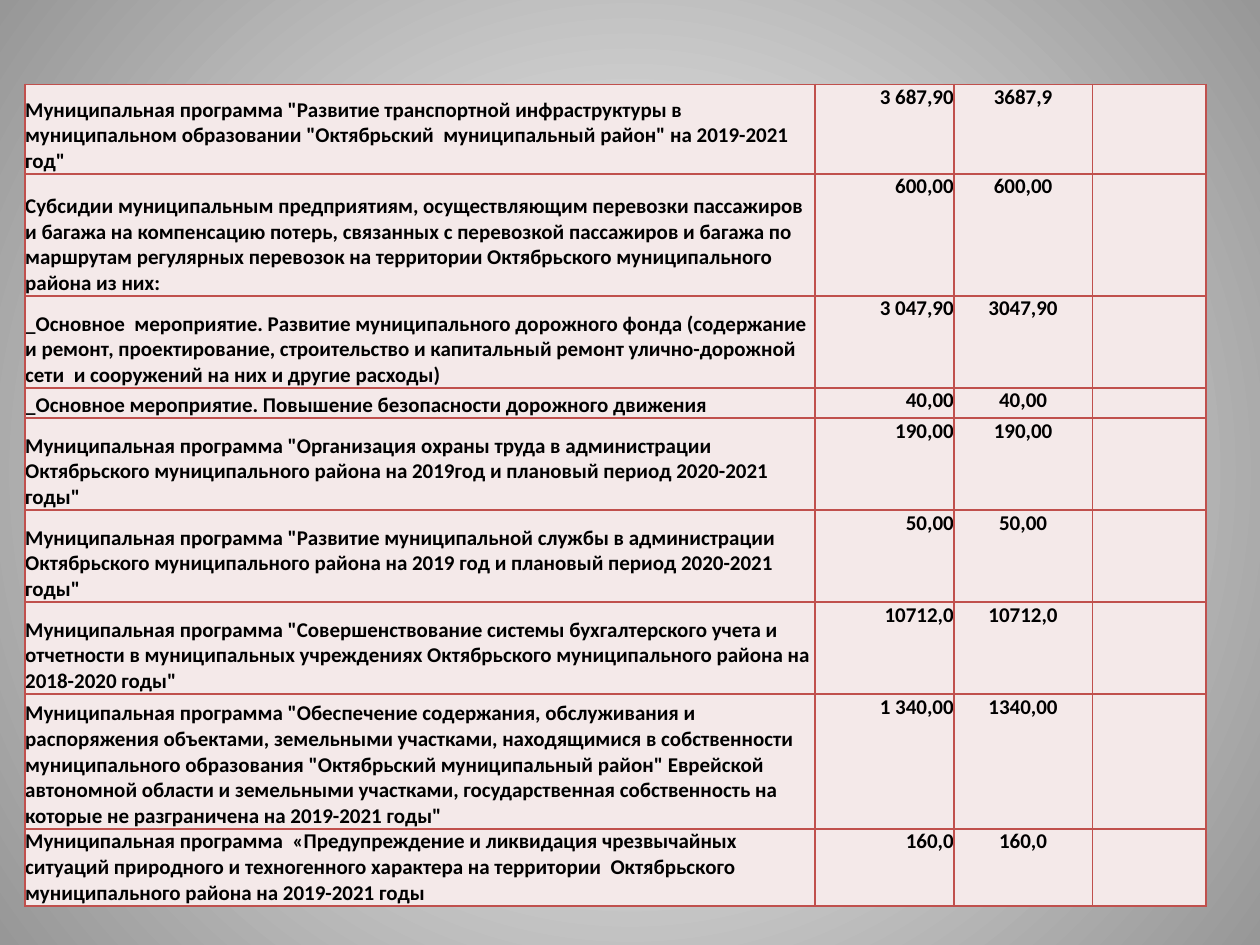
from lxml.etree import SubElement
from pptx import Presentation
from pptx.dml.color import RGBColor
from pptx.enum.text import MSO_ANCHOR, PP_ALIGN
from pptx.oxml import parse_xml
from pptx.oxml.ns import nsdecls, qn
from pptx.util import Inches, Pt

ROWS = [
    (0.71, 'Муниципальная программа "Развитие транспортной инфраструктуры в муниципальном образовании "Октябрьский  муниципальный район" на 2019-2021 год"', "3 687,90", "3687,9"),
    (0.97, "Субсидии муниципальным предприятиям, осуществляющим перевозки пассажиров и багажа на компенсацию потерь, связанных с перевозкой пассажиров и багажа по маршрутам регулярных перевозок на территории Октябрьского муниципального района из них:", "600,00", "600,00"),
    (0.73, "_Основное  мероприятие. Развитие муниципального дорожного фонда (содержание и ремонт, проектирование, строительство и капитальный ремонт улично-дорожной сети  и сооружений на них и другие расходы)", "3 047,90", "3047,90"),
    (0.24, "_Основное мероприятие. Повышение безопасности дорожного движения", "40,00", "40,00"),
    (0.73, 'Муниципальная программа "Организация охраны труда в администрации Октябрьского муниципального района на 2019год и плановый период 2020-2021 годы"', "190,00", "190,00"),
    (0.73, 'Муниципальная программа "Развитие муниципальной службы в администрации Октябрьского муниципального района на 2019 год и плановый период 2020-2021 годы"', "50,00", "50,00"),
    (0.73, 'Муниципальная программа "Совершенствование системы бухгалтерского учета и отчетности в муниципальных учреждениях Октябрьского муниципального района на 2018-2020 годы"', "10712,0", "10712,0"),
    (1.07, 'Муниципальная программа "Обеспечение содержания, обслуживания и распоряжения объектами, земельными участками, находящимися в собственности муниципального образования "Октябрьский муниципальный район" Еврейской автономной области и земельными участками, государственная собственность на которые не разграничена на 2019-2021 годы"', "1 340,00", "1340,00"),
    (0.57, "Муниципальная программа  «Предупреждение и ликвидация чрезвычайных ситуаций природного и техногенного характера на территории  Октябрьского муниципального района на 2019-2021 годы", "160,0", "160,0"),
]
COLS = [
    (6.27, PP_ALIGN.LEFT, MSO_ANCHOR.BOTTOM),
    (1.1, PP_ALIGN.RIGHT, MSO_ANCHOR.TOP),
    (1.1, PP_ALIGN.CENTER, MSO_ANCHOR.TOP),
    (0.9, PP_ALIGN.LEFT, MSO_ANCHOR.TOP),
]
COLORS = {"text": "000000", "cell": "F4E9E9", "line": "C0504D",
          "inner": "FFFFFF", "outer": "979797"}


def set_back(slide):
    fill = slide.background.fill
    fill.gradient()
    stops = fill.gradient_stops
    for stop, pos, name in zip(stops, (0, 1), ("inner", "outer")):
        stop.position = pos
        stop.color.rgb = RGBColor.from_string(COLORS[name])
    grad = slide.background._cSld.find(".//" + qn("a:gradFill"))
    grad.remove(grad.find(qn("a:lin")))
    shade = SubElement(grad, qn("a:path"), path="circle")
    SubElement(shade, qn("a:fillToRect"), dict.fromkeys("ltrb", "50000"))


def add_lines(cell):
    props = cell._tc.get_or_add_tcPr()
    for i, side in enumerate("LRTB"):
        props.insert(i, parse_xml(
            f'<a:ln{side} {nsdecls("a")} w="{Pt(1)}"><a:solidFill>'
            f'<a:srgbClr val="{COLORS["line"]}"/></a:solidFill></a:ln{side}>'))


def fill_cell(cell, text, align, anchor):
    cell.margin_left = cell.margin_right = 0
    cell.margin_top = cell.margin_bottom = 0
    cell.vertical_anchor = anchor
    cell.fill.solid()
    cell.fill.fore_color.rgb = RGBColor.from_string(COLORS["cell"])
    add_lines(cell)
    cell.text = text
    para = cell.text_frame.paragraphs[0]
    para.alignment = align
    font = para.font
    font.name, font.size, font.bold = "Calibri", Pt(12), True
    font.color.rgb = RGBColor.from_string(COLORS["text"])


def main():
    deck = Presentation()
    deck.slide_width, deck.slide_height = Inches(10), Inches(7.5)
    slide = deck.slides.add_slide(deck.slide_layouts[6])
    set_back(slide)
    wide = sum(col[0] for col in COLS)
    high = sum(row[0] for row in ROWS)
    table = slide.shapes.add_table(
        len(ROWS), len(COLS), Inches(0.2), Inches(0.67),
        Inches(wide), Inches(high)).table
    table.first_row = table.horz_banding = False
    for col, (width, _, _) in zip(table.columns, COLS):
        col.width = Inches(width)
    for r, (height, *texts) in enumerate(ROWS):
        table.rows[r].height = Inches(height)
        for c, (text, col) in enumerate(zip(texts + [""], COLS)):
            fill_cell(table.cell(r, c), text, *col[1:])
    deck.save("out.pptx")


if __name__ == "__main__":
    main()
